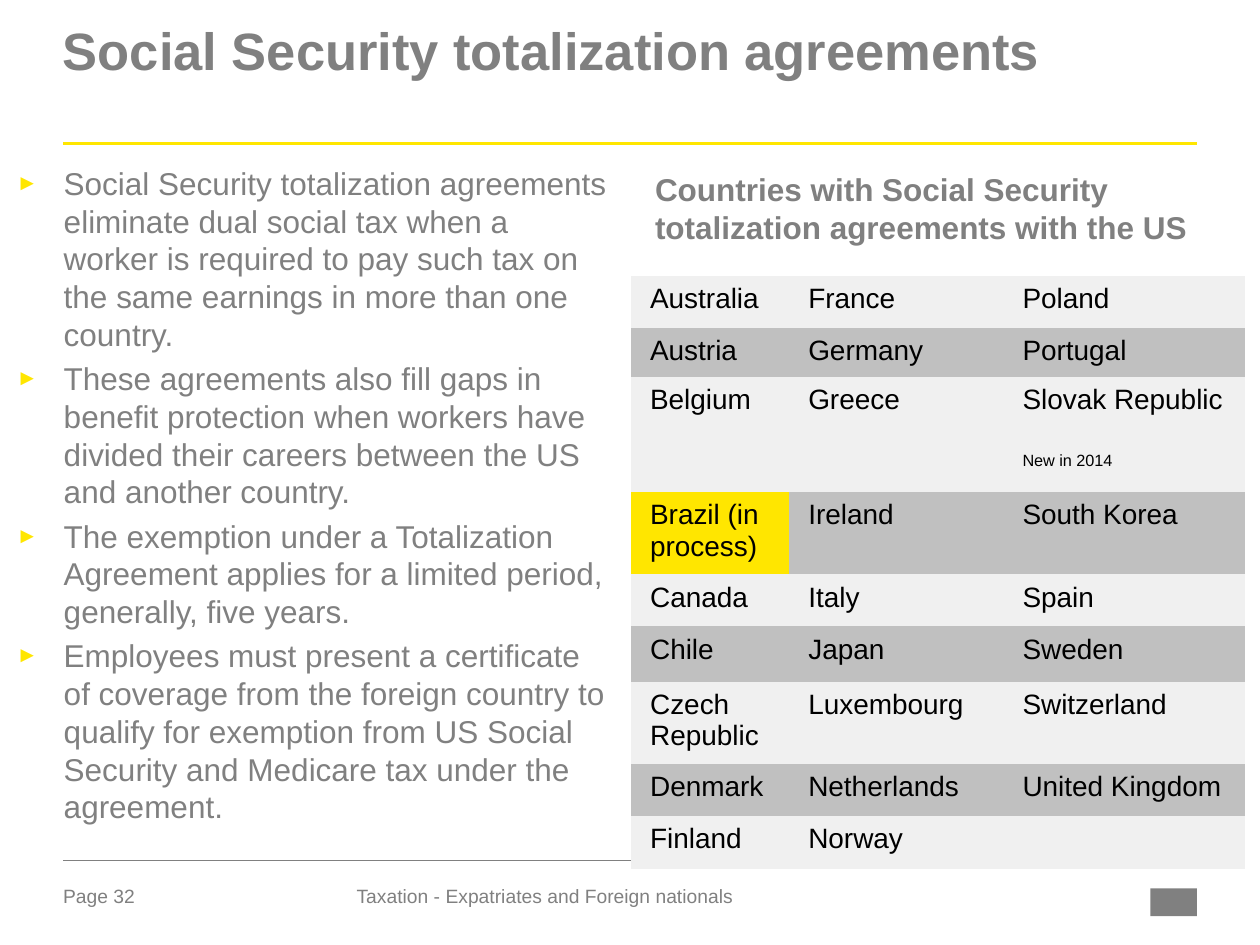
from lxml.etree import SubElement
from pptx import Presentation
from pptx.dml.color import RGBColor
from pptx.enum.shapes import MSO_CONNECTOR as CONNECTOR, MSO_SHAPE as SHAPE
from pptx.enum.text import MSO_ANCHOR as ANCHOR, PP_ALIGN as ALIGN
from pptx.oxml.ns import qn
from pptx.util import Pt

COLORS = {
    "grey": "808080", "yellow": "FFE600", "white": "FFFFFF", "black": "000000",
    "light": "F0F0F0", "band": "C0C0C0",
}
FONT = "Arial"
NO_STYLE = "{2D5ABB26-0587-4C30-8999-92F81FD0307C}"

BENEFITS = [
    "Social Security totalization agreements eliminate dual social tax when a worker "
    "is required to pay such tax on the same earnings in more than one country.",
    "These agreements also fill gaps in benefit protection when workers have divided "
    "their careers between the US and another country.",
    "The exemption under a Totalization Agreement applies for a limited period, "
    "generally, five years.",
    "Employees must present a certificate of coverage from the foreign country to "
    "qualify for exemption from US Social Security and Medicare tax under the agreement.",
]
COUNTRIES = [
    ("Australia", "France", "Poland"),
    ("Austria", "Germany", "Portugal"),
    ("Belgium", "Greece", "Slovak Republic"),
    ("Brazil (in process)", "Ireland", "South Korea"),
    ("Canada", "Italy", "Spain"),
    ("Chile", "Japan", "Sweden"),
    ("Czech Republic", "Luxembourg", "Switzerland"),
    ("Denmark", "Netherlands", "United Kingdom"),
    ("Finland", "Norway", ""),
]
REMARKS = {"Slovak Republic": "New in 2014"}
IN_PROCESS = "Brazil (in process)"
COLUMN_WIDTHS = (90.4, 122.4, 138)
ROW_HEIGHTS = (29.7, 26.2, 61, 44, 29.7, 31.7, 43.5, 29.7, 29.7)


def rgb(name):
    return RGBColor.from_string(COLORS[name])


def add_run(paragraph, text, size, color="grey", bold=False):
    run = paragraph.add_run()
    run.text = text
    run.font.name = FONT
    run.font.size = Pt(size)
    run.font.bold = bold
    run.font.color.rgb = rgb(color)
    return run


def add_text_frame(slide, left, top, width, height):
    frame = slide.shapes.add_textbox(Pt(left), Pt(top), Pt(width), Pt(height)).text_frame
    frame.word_wrap = True
    frame.margin_left = frame.margin_right = frame.margin_top = frame.margin_bottom = 0
    return frame


def add_label(slide, text, left, top, width, height, size, bold=False):
    paragraph = add_text_frame(slide, left, top, width, height).paragraphs[0]
    add_run(paragraph, text, size, bold=bold)
    return paragraph


def add_rule(slide, top, color, weight):
    rule = slide.shapes.add_connector(CONNECTOR.STRAIGHT, Pt(36), Pt(top), Pt(684), Pt(top))
    rule.line.color.rgb = rgb(color)
    rule.line.width = Pt(weight)
    SubElement(rule._element.spPr, qn("a:effectLst"))


def add_panel(slide, color, left, top, width, height):
    panel = slide.shapes.add_shape(SHAPE.RECTANGLE, Pt(left), Pt(top), Pt(width), Pt(height))
    panel.shadow.inherit = False
    panel.fill.solid()
    panel.fill.fore_color.rgb = rgb(color)
    panel.line.fill.background()
    return panel


def indent(paragraph, left, first):
    properties = paragraph._p.get_or_add_pPr()
    properties.set("marL", str(Pt(left)))
    properties.set("indent", str(Pt(first)))
    return properties


def add_bullets(slide, items, left, top, width, height):
    frame = add_text_frame(slide, left, top, width, height)
    for index, item in enumerate(items):
        paragraph = frame.add_paragraph() if index else frame.paragraphs[0]
        properties = indent(paragraph, 27, -27)
        bullet_color = SubElement(properties, qn("a:buClr"))
        SubElement(bullet_color, qn("a:srgbClr"), val=COLORS["yellow"])
        SubElement(properties, qn("a:buSzPct"), val="70000")
        SubElement(properties, qn("a:buFont"), typeface=FONT)
        SubElement(properties, qn("a:buChar"), char="►")
        if index:
            paragraph.space_before = Pt(3.6)
        add_run(paragraph, item, 18)


def add_heading(slide, text):
    panel = add_panel(slide, "white", 360.7, 93.6, 350.8, 367.2)
    panel.text_frame.word_wrap = True
    panel.text_frame.vertical_anchor = ANCHOR.TOP
    paragraph = panel.text_frame.paragraphs[0]
    paragraph.alignment = ALIGN.LEFT
    indent(paragraph, 6.5, 0)
    add_run(paragraph, text, 18, bold=True)


def add_remark(paragraph, remark):
    for _ in range(2):
        paragraph.add_line_break()
    for line_break in paragraph._p.findall(qn("a:br")):
        SubElement(line_break, qn("a:rPr"), sz="1600")
    run = add_run(paragraph, remark, 16, "black")
    run.font._element.set("baseline", "30000")


def fill_cell(cell, country, color):
    cell.fill.solid()
    cell.fill.fore_color.rgb = rgb(color)
    cell.margin_left = cell.margin_right = Pt(10.8)
    cell.margin_top = cell.margin_bottom = Pt(4.3)
    if not country:
        return
    paragraph = cell.text_frame.paragraphs[0]
    paragraph.space_after = Pt(2)
    add_run(paragraph, country, 16, "black")
    if country in REMARKS:
        add_remark(paragraph, REMARKS[country])


def add_country_table(slide, left, top):
    table = slide.shapes.add_table(
        len(COUNTRIES), len(COLUMN_WIDTHS), Pt(left), Pt(top),
        Pt(sum(COLUMN_WIDTHS)), Pt(sum(ROW_HEIGHTS))).table
    table.first_row = table.horz_banding = False
    table._tbl.tblPr.find(qn("a:tableStyleId")).text = NO_STYLE
    for column, width in zip(table.columns, COLUMN_WIDTHS):
        column.width = Pt(width)
    for index, (row, height, countries) in enumerate(zip(table.rows, ROW_HEIGHTS, COUNTRIES)):
        row.height = Pt(height)
        row_color = "band" if index % 2 else "light"
        for cell, country in zip(row.cells, countries):
            fill_cell(cell, country, "yellow" if country == IN_PROCESS else row_color)


def main():
    deck = Presentation()
    deck.slide_width, deck.slide_height = Pt(720), Pt(540)
    slide = deck.slides.add_slide(deck.slide_layouts[6])

    add_label(slide, "Page 32", 36, 505.4, 57, 16, 11)
    add_panel(slide, "grey", 657.4, 507.6, 26.6, 16)
    add_rule(slide, 82.1, "yellow", 1.5)
    add_rule(slide, 491.8, "grey", 0.25)
    title = add_label(slide, "Social Security totalization agreements",
                      36, 15.8, 648, 67.7, 30, bold=True)
    title.line_spacing = 0.85
    add_bullets(slide, BENEFITS, 9.4, 93.6, 339.8, 388.8)
    add_heading(slide, "Countries with Social Security totalization agreements with the US")
    add_country_table(slide, 360.7, 157.7)
    add_label(slide, "Taxation - Expatriates and Foreign nationals", 203.8, 505.4, 270.7, 16, 11)
    deck.save("out.pptx")


if __name__ == "__main__":
    main()
